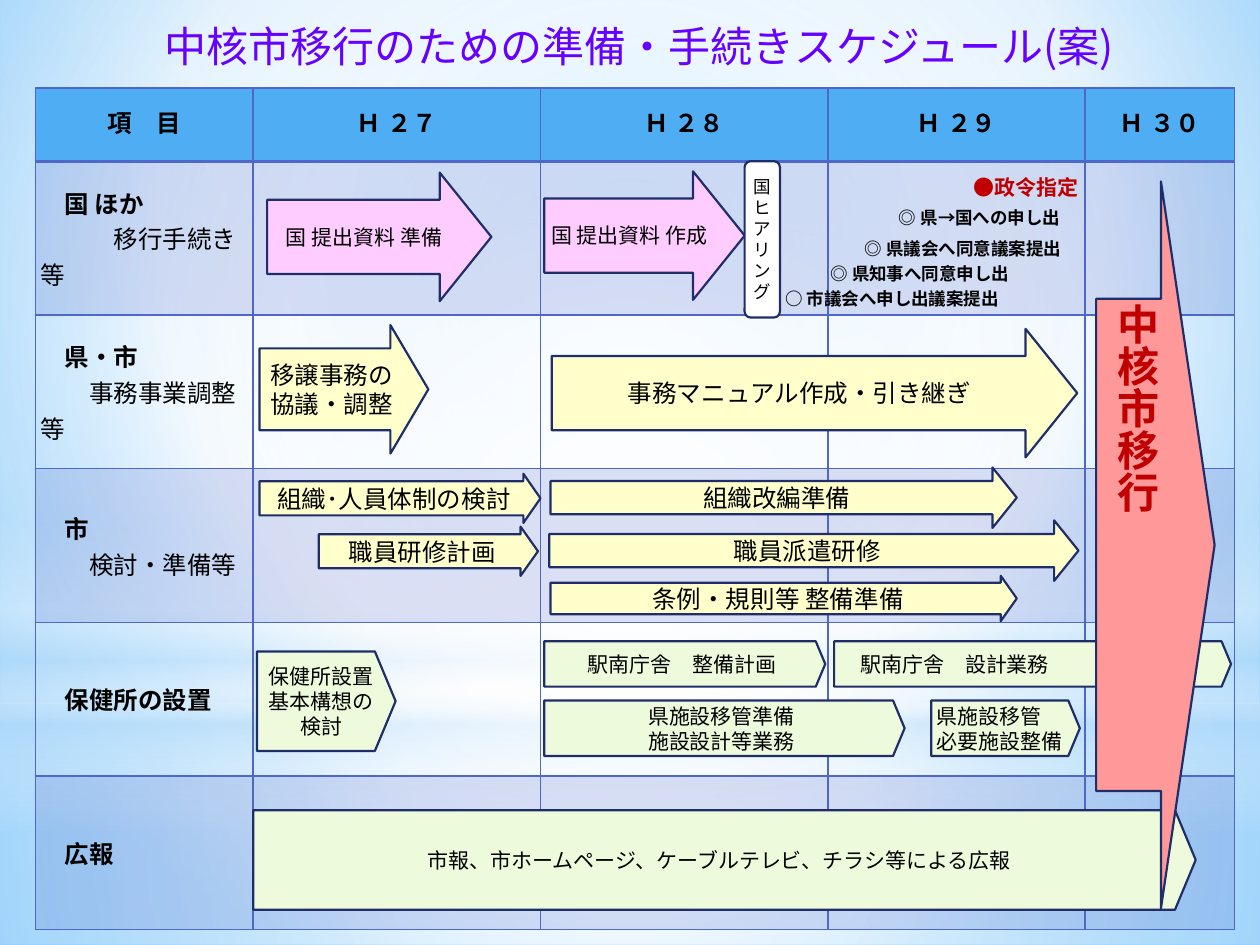
from lxml import etree
from pptx import Presentation
from pptx import util as u
from pptx.dml import color
from pptx.enum import shapes, text
from pptx.oxml import ns

COLUMNS, ROWS = 1000, 750
CELL = u.Inches(0.01)
LATIN, JAPANESE = "Karla", "Noto Sans CJK JP"
INK, OUTLINE, GRID_LINE = "000000", "1F2E69", "4E67C8"
YELLOW, GREEN, PINK, RED = "FFFFCC", "EDFBDC", "FFCCFF", "C00000"
LEFT, CENTER = text.PP_ALIGN.LEFT, text.PP_ALIGN.CENTER
ARROW = shapes.MSO_SHAPE.RIGHT_ARROW
PLATE = shapes.MSO_SHAPE.PENTAGON
ROUNDED = shapes.MSO_SHAPE.ROUNDED_RECTANGLE

HEADERS = ["項\u3000目".replace("\u3000", "　"), "Ｈ ２７", "Ｈ ２８", "Ｈ ２９", "Ｈ ３０"]
TOPICS = [
    ("国 ほか", "移行手続き等", 3),
    ("県・市", "事務事業調整等", 2),
    ("市", "検討・準備等", 2),
    ("保健所の設置", "", 0),
    ("広報", "", 0),
]
TASK_ARROWS = [
    ((206, 258, 134, 102), (0.637, 0.295), ["移譲事務の", "協議・調整"]),
    ((438, 261, 417, 102), (0.578, 0.402), ["事務マニュアル作成・引き継ぎ"]),
    ((206, 376, 223, 39), (0.695, 0.348), ["組織･人員体制の検討"]),
    ((436, 413, 420, 48), (0.549, 0.402), ["職員派遣研修"]),
    ((437, 371, 370, 48), (0.549, 0.402), ["組織改編準備"]),
    ((253, 418, 174, 39), (0.695, 0.354), ["職員研修計画"]),
    ((437, 457, 370, 36), (0.695, 0.354), ["条例・規則等 整備準備"]),
]
PLATES = [
    ((204, 517, 110, 79), ["保健所設置", "基本構想の", "検討"], CENTER, 0),
    ((432, 509, 223, 36), ["駅南庁舎　整備計画"], CENTER, 0),
    ((662, 509, 315, 36), ["駅南庁舎　設計業務"], LEFT, 1),
    ((432, 556, 286, 44), ["県施設移管準備", "施設設計等業務"], CENTER, 0),
    ((739, 556, 118, 44), ["県施設移管", "必要施設整備"], LEFT, 0),
    ((201, 643, 748, 79), ["市報、市ホームページ、ケーブルテレビ、チラシ等による広報"], CENTER, 0),
]
MILESTONES = [
    ((618, 226, 202, 22), "○ 市議会へ申し出議案提出", 10, INK),
    ((654, 208, 202, 18), "◎ 県知事へ同意申し出", 10, INK),
    ((681, 184, 202, 27), "◎ 県議会へ同意議案提出", 10, INK),
    ((708, 159, 202, 27), "◎ 県→国への申し出", 10, INK),
    ((767, 135, 128, 27), "●政令指定", 12, RED),
]


def rgb(value):
    """Turn a hex string into a colour."""
    return color.RGBColor.from_string(value)


def place(area):
    """Turn grid columns and rows into lengths."""
    return [CELL * part for part in area]


def child(parent, tag, **attributes):
    """Add a drawing element below a parent."""
    node = etree.SubElement(parent, ns.qn("a:" + tag))
    for name, value in attributes.items():
        node.set(name, str(value))
    return node


def paint_gradient(owner, fill, stops, focus=None):
    """Paint a circular gradient around a focus, or a vertical one."""
    fill.gradient()
    gradient = owner.element.find(".//" + ns.qn("a:gradFill"))
    for part in list(gradient):
        gradient.remove(part)
    listing = child(gradient, "gsLst")
    for position, value, opacity in stops:
        stop = child(listing, "gs", pos=position * 1000)
        shade = child(stop, "srgbClr", val=value)
        child(shade, "alpha", val=opacity * 1000)
    if focus:
        circle = child(gradient, "path", path="circle")
        child(circle, "fillToRect", **{s: v * 1000 for s, v in zip("ltrb", focus)})
    else:
        child(gradient, "lin", ang=90 * 60000, scaled=0)


def write(para, words, size, value=INK, bold=False, font=LATIN, align=LEFT, indent=0):
    """Fill a paragraph with one run, indented by whole characters."""
    para.alignment = align
    if indent:
        properties = para._p.get_or_add_pPr()
        properties.set("marL", "0")
        properties.set("indent", str(u.Pt(size * indent)))
    span = para.add_run()
    span.text = words
    span.font.size, span.font.bold, span.font.name = u.Pt(size), bold, font
    span.font.color.rgb = rgb(value)
    child(span._r.get_or_add_rPr(), "ea", typeface=font)


def add_box(page, kind, area, lines=(), size=12, fill=None, adjust=(), side=4, **style):
    """Add a shape with centred-height text, outlined when it is filled."""
    box = page.shapes.add_shape(kind, *place(area))
    box.shadow.inherit = False
    for index, value in enumerate(adjust):
        box.adjustments[index] = value
    if fill:
        box.fill.solid()
        box.fill.fore_color.rgb = rgb(fill)
        box.line.color.rgb = rgb(OUTLINE)
        box.line.width = u.Pt(1.25)
    else:
        box.fill.background()
        box.line.fill.background()
    frame = box.text_frame
    frame.word_wrap = True
    frame.vertical_anchor = text.MSO_ANCHOR.MIDDLE
    frame.margin_left = frame.margin_right = CELL * side
    frame.margin_top = frame.margin_bottom = CELL * 4
    for index, words in enumerate(lines):
        para = frame.add_paragraph() if index else frame.paragraphs[0]
        write(para, words, size, **style)
    return box


def add_backdrop(page):
    """Paint the sky: a background and four soft glows."""
    paint_gradient(page.background._cSld and page, page.background.fill,
                   [(0, "9ED5FF", 100), (60, "FFFFFF", 100), (100, "5BB9FF", 100)],
                   (20, 10, 20, 60))
    middle = (50, 50, 50, 50)
    rectangle, oval = shapes.MSO_SHAPE.RECTANGLE, shapes.MSO_SHAPE.OVAL
    glows = [
        (rectangle, (0, 558, COLUMNS, 192), middle,
         [(0, "FFFFFF", 91), (37, "FFFFFF", 76), (100, "B4DCFA", 79)]),
        (rectangle, (0, 0, COLUMNS, 558), middle,
         [(0, "FFFFFF", 89), (48, "FFFFFF", 62), (100, "B4DCFA", 79)]),
        (rectangle, (0, 412, COLUMNS, 250), None,
         [(0, "FFFFFF", 0), (29, "FFFFFF", 30), (45, "B4DCFA", 40),
          (55, "FFFFFF", 26), (65, "B4DCFA", 60), (100, "FFFFFF", 0)]),
        (oval, (0, 175, COLUMNS, 558), middle, [(0, "FFFFFF", 100), (56, "FFFFFF", 0)]),
    ]
    for kind, area, focus, stops in glows:
        glow = add_box(page, kind, area)
        paint_gradient(glow, glow.fill, stops, focus)


def add_title(page, words):
    """Set the title placeholder above the backdrop."""
    title = page.shapes.title
    title.element.getparent().append(title.element)
    title.left, title.top, title.width, title.height = place((106, 5, 803, 63))
    title.text_frame.vertical_anchor = text.MSO_ANCHOR.MIDDLE
    write(title.text_frame.paragraphs[0], words, 24, "6600FF", font=JAPANESE, align=CENTER)


def style_cell(cell, fill, opacity, bottom):
    """Give a cell its margins, borders and tint."""
    cell.vertical_anchor = text.MSO_ANCHOR.MIDDLE
    cell.margin_left = cell.margin_right = cell.margin_top = cell.margin_bottom = CELL * 4
    properties = cell._tc.get_or_add_tcPr()
    for side in "LRTB":
        width = bottom if side == "B" else 1
        line = child(properties, "ln" + side, w=u.Pt(width))
        child(child(line, "solidFill"), "srgbClr", val=GRID_LINE)
    if not fill:
        cell.fill.background()
        return
    cell.fill.solid()
    cell.fill.fore_color.rgb = rgb(fill)
    shade = properties.find(ns.qn("a:solidFill"))[0]
    child(shade, "alpha", val=opacity * 1000)


def add_schedule(page):
    """Add the table of topics by year."""
    count = len(TOPICS) + 1
    table = page.shapes.add_table(count, len(HEADERS), *place((28, 70, 953, 667))).table
    for column, width in zip(table.columns, (173, 228, 228, 204, 119)):
        column.width = CELL * width
    for index, row in enumerate(table.rows):
        row.height = CELL * (122 if index else 58)
        for cell in row.cells:
            tint = GRID_LINE if index % 2 else None
            style_cell(cell, tint if index else "4FADF3", 20 if index else 100, 1 if index else 2)
    for index, words in enumerate(HEADERS):
        write(table.cell(0, index).text_frame.paragraphs[0], words, 14, bold=True, align=CENTER)
    for index, (topic, detail, indent) in enumerate(TOPICS, 1):
        frame = table.cell(index, 0).text_frame
        write(frame.paragraphs[0], topic, 14, bold=True, font=JAPANESE, indent=1)
        if detail:
            write(frame.add_paragraph(), detail, 14, font=JAPANESE, indent=indent)


def main():
    """Build the schedule page."""
    deck = Presentation()
    deck.slide_width, deck.slide_height = place((COLUMNS, ROWS))
    page = deck.slides.add_slide(deck.slide_layouts[5])
    add_backdrop(page)
    add_title(page, "中核市移行のための準備・手続きスケジュール(案)")
    add_schedule(page)
    for area, adjust, lines in TASK_ARROWS:
        add_box(page, ARROW, area, lines, 14, YELLOW, adjust, align=CENTER)
    for area, lines, align, indent in PLATES:
        add_box(page, PLATE, area, lines, 12, GREEN, (0.208,), align=align, indent=indent)
    goal = add_box(page, ARROW, (870, 144, 94, 577), ["中核市移行"], 24, "FF9999",
                   (0.677, 0.453), value=RED, bold=True, align=CENTER)
    goal.text_frame._txBody.bodyPr.set("vert", "eaVert")
    for area, words, side in (((432, 136, 159, 102), "国 提出資料 作成", 0),
                              ((212, 137, 178, 102), "国 提出資料 準備", 4)):
        add_box(page, ARROW, area, [words], 12, PINK, (0.578, 0.402), side, align=CENTER)
    add_box(page, ROUNDED, (591, 128, 28, 124), ["国ヒアリング"], 10, "FFFFFF", align=CENTER)
    for area, words, size, value in MILESTONES:
        add_box(page, ROUNDED, area, [words], size, value=value, bold=True)
    deck.save("out.pptx")


if __name__ == "__main__":
    main()
